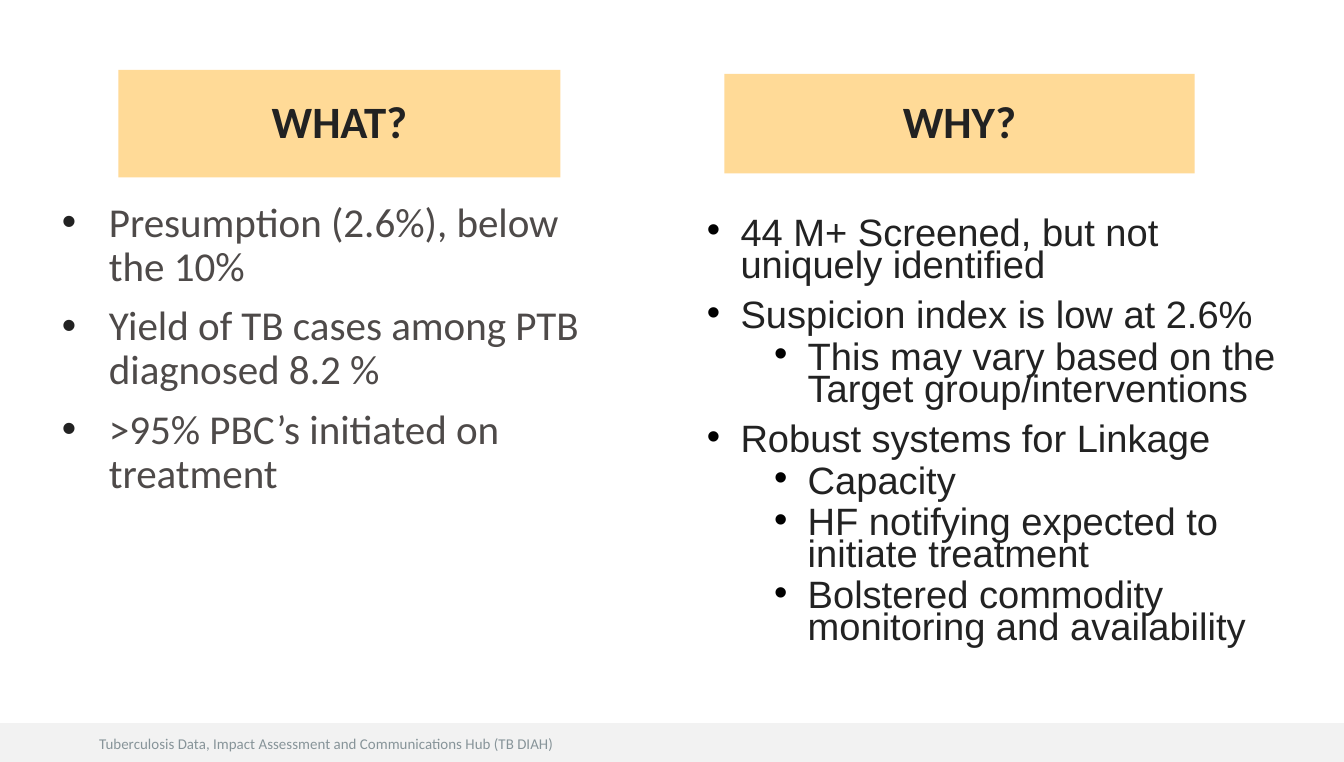
from lxml.etree import SubElement
from pptx import Presentation
from pptx.dml.color import RGBColor
from pptx.enum.shapes import MSO_SHAPE
from pptx.enum.text import MSO_ANCHOR, PP_ALIGN
from pptx.oxml.ns import qn
from pptx.util import Inches, Pt

WHITE = RGBColor(0xFF, 0xFF, 0xFF)
BLACK = RGBColor(0x00, 0x00, 0x00)
INK = RGBColor(0x22, 0x22, 0x22)
BROWN = RGBColor(0x4E, 0x4A, 0x49)
SLATE = RGBColor(0x87, 0x94, 0x99)
PALE = RGBColor(0xF2, 0xF2, 0xF2)
AMBER = RGBColor(0xFF, 0xDA, 0x97)


class Deck:
    """Style and current slide; boxes are in percent of the slide's size."""

    head = dict(name="Calibri", size=Pt(24), bold=True, color=INK)
    foot = dict(name="Calibri", size=Pt(8), color=SLATE)
    what = dict(name="Calibri", size=Pt(22), color=BROWN)
    why = dict(name="Arial", size=Pt(20.4), color=INK)

    def __init__(self):
        self.prs = Presentation()
        self.prs.slide_width, self.prs.slide_height = Inches(10), Inches(5.67)
        self.slide = self.prs.slides.add_slide(self.prs.slide_layouts[6])
        fill = self.slide.background.fill
        fill.solid()
        fill.fore_color.rgb = WHITE

    def place(self, box):
        sizes = (self.prs.slide_width, self.prs.slide_height) * 2
        return [int(size * part / 100) for size, part in zip(sizes, box)]

    def frame(self, shape, side=0.07, top=0.04, anchor=MSO_ANCHOR.TOP):
        frame = shape.text_frame
        values = dict(word_wrap=True, vertical_anchor=anchor,
                      margin_left=Inches(side), margin_right=Inches(side),
                      margin_top=Inches(top), margin_bottom=Inches(top))
        for key, value in values.items():
            setattr(frame, key, value)
        return frame

    def label(self, para, text, style):
        run = para.add_run()
        run.text = text
        for key, value in style.items():
            if key == "color":
                run.font.color.rgb = value
            else:
                setattr(run.font, key, value)

    def bar(self, box, color):
        shape = self.slide.shapes.add_shape(MSO_SHAPE.RECTANGLE, *self.place(box))
        shape.shadow.inherit = False
        shape.fill.solid()
        shape.fill.fore_color.rgb = color
        shape.line.fill.background()
        return shape

    def title(self, box, text):
        frame = self.frame(self.bar(box, AMBER), anchor=MSO_ANCHOR.MIDDLE)
        para = frame.paragraphs[0]
        para.alignment = PP_ALIGN.CENTER
        para.line_spacing = 0.9
        self.label(para, text, self.head)

    def note(self, box, text):
        shape = self.slide.shapes.add_textbox(*self.place(box))
        frame = self.frame(shape, side=0.1, top=0.05)
        self.label(frame.paragraphs[0], text, self.foot)

    def bullet(self, para, left, hang, color):
        props = para._p.get_or_add_pPr()
        props.set("marL", str(Inches(left)))
        props.set("indent", str(-Inches(hang)))
        tint = SubElement(props, qn("a:buClr"))
        SubElement(tint, qn("a:srgbClr"), val=str(color))
        SubElement(props, qn("a:buFont"), typeface="Arial")
        SubElement(props, qn("a:buChar"), char="•")

    def points(self, box, items, style, left, hang, color, lines, gaps):
        frame = self.frame(self.slide.shapes.add_textbox(*self.place(box)))
        for i, (level, text) in enumerate(items):
            para = frame.add_paragraph() if i else frame.paragraphs[0]
            self.bullet(para, left + level / 2, hang, color)
            para.level = level
            para.line_spacing = lines
            para.space_before = Pt(gaps[level] if i else 0)
            self.label(para, text, style)


def main():
    deck = Deck()

    # Footer
    deck.bar((0, 94.89, 100, 5.11), PALE)
    deck.note((6.4, 95.59, 50, 4.23),
              "Tuberculosis Data, Impact Assessment and Communications Hub (TB DIAH)")

    # Left side: findings
    deck.title((8.8, 9.17, 32.9, 14.11), "WHAT?")
    deck.points((2.4, 25.75, 41.8, 57.14), [
        (0, "Presumption (2.6%), below the 10%"),
        (0, "Yield of TB cases among PTB diagnosed 8.2 %"),
        (0, ">95% PBC’s initiated on treatment"),
    ], deck.what, left=0.5, hang=0.35, color=INK, lines=0.9, gaps=[8])

    # Right side: reasons
    deck.title((53.9, 9.7, 35, 13.05), "WHY?")
    deck.points((51.9, 28.22, 45.7, 62.26), [
        (0, "44 M+ Screened, but not uniquely identified"),
        (0, "Suspicion index is low at 2.6%"),
        (1, "This may vary based on the Target group/interventions"),
        (0, "Robust systems for Linkage"),
        (1, "Capacity"),
        (1, "HF notifying expected to initiate treatment"),
        (1, "Bolstered commodity monitoring and availability"),
    ], deck.why, left=0.25, hang=0.25, color=BLACK, lines=0.7, gaps=[10, 5])

    deck.prs.save("out.pptx")


if __name__ == "__main__":
    main()
